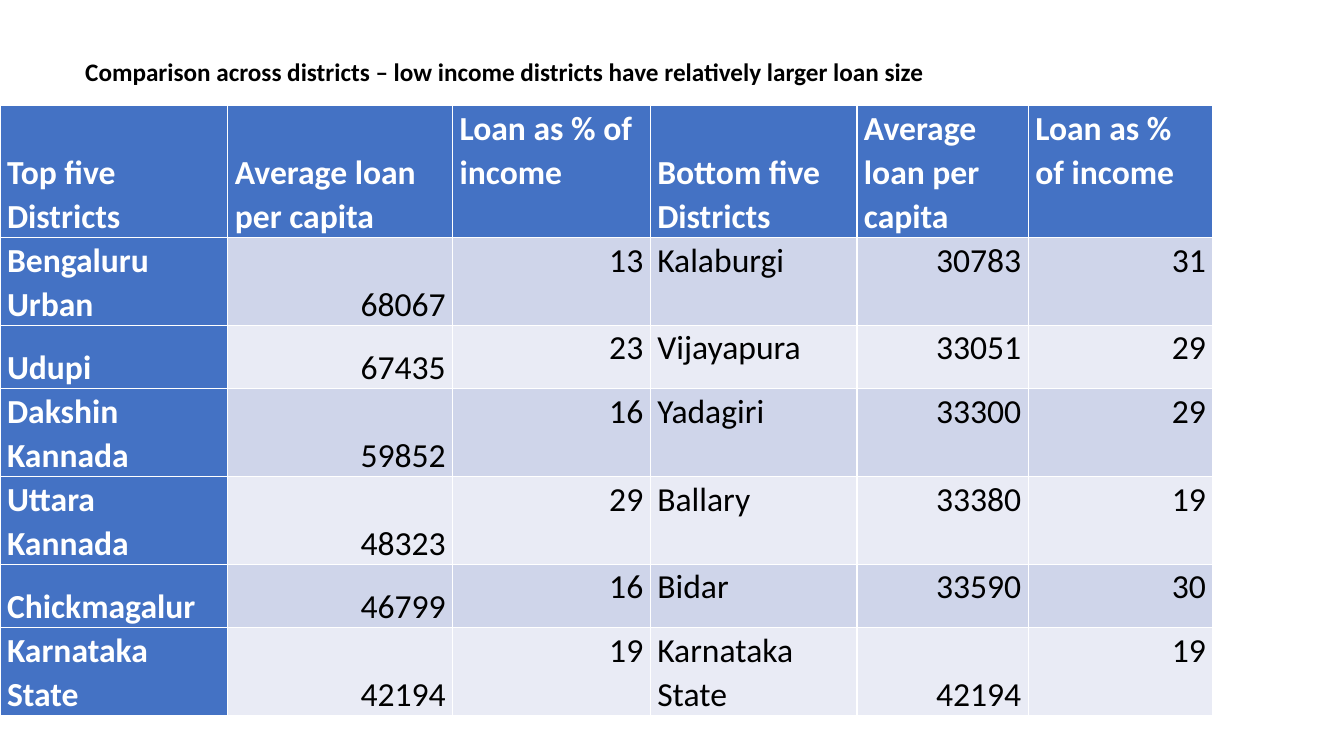
from dataclasses import dataclass

import pptx
import pptx.dml.color
import pptx.enum.text
import pptx.util

Inches = pptx.util.Inches
Pt = pptx.util.Pt
RGB = pptx.dml.color.RGBColor.from_string
ALIGN = pptx.enum.text.PP_ALIGN
ANCHOR = pptx.enum.text.MSO_ANCHOR


@dataclass(frozen=True)
class Theme:
    font: str = "Calibri"
    title_size: int = 18
    table_size: int = 24
    text: str = "000000"
    header_text: str = "FFFFFF"
    header_fill: str = "4472C4"
    bands: tuple = ("E9EBF5", "CFD5EA")


theme = Theme()


def style_text(p, size, color, bold, align):
    p.font.name = theme.font
    p.font.size = Pt(size)
    p.font.bold = bold
    p.font.color.rgb = RGB(color)
    p.alignment = align


prs = pptx.Presentation()
prs.slide_width, prs.slide_height = Inches(13.33), Inches(7.5)
s = prs.slides.add_slide(prs.slide_layouts[5])

# Title
title = s.shapes.title
title.left, title.top = Inches(0.7), Inches(0.51)
title.width, title.height = Inches(8.61), Inches(0.4)
tf = title.text_frame
tf.text = "Comparison across districts – low income districts have relatively larger loan size"
tf.auto_size = pptx.enum.text.MSO_AUTO_SIZE.NONE
tf.word_wrap = True
tf.vertical_anchor = ANCHOR.TOP
style_text(tf.paragraphs[0], theme.title_size, theme.text, True, ALIGN.CENTER)

# District table
measures = ["Average loan per capita", "Loan as % of income"]
rows = [
    ["Top five Districts", *measures, "Bottom five Districts", *measures],
    ["Bengaluru Urban", 68067, 13, "Kalaburgi", 30783, 31],
    ["Udupi", 67435, 23, "Vijayapura", 33051, 29],
    ["Dakshin Kannada", 59852, 16, "Yadagiri", 33300, 29],
    ["Uttara Kannada", 48323, 29, "Ballary", 33380, 19],
    ["Chickmagalur", 46799, 16, "Bidar", 33590, 30],
    ["Karnataka State", 42194, 19, "Karnataka State", 42194, 19],
]
col_widths = [2.26, 2.23, 1.96, 2.05, 1.7, 1.83]
row_heights = [1.12, 0.87, 0.63, 0.79, 0.79, 0.63, 0.87]
bottom_cells = {(0, 3), (0, 4), (len(rows) - 1, 4)}

table = s.shapes.add_table(len(rows), len(col_widths), Inches(0), Inches(1.05),
                           Inches(12.04), Inches(5.94)).table
table.first_col = True
for column, width in zip(table.columns, col_widths):
    column.width = Inches(width)
for row, height in zip(table.rows, row_heights):
    row.height = Inches(height)

for i, values in enumerate(rows):
    for j, value in enumerate(values):
        cell = table.cell(i, j)
        is_header = i == 0 or j == 0
        at_bottom = j < 2 or (i, j) in bottom_cells
        cell.fill.solid()
        cell.fill.fore_color.rgb = RGB(theme.header_fill if is_header else theme.bands[i % 2])
        cell.margin_left = cell.margin_right = Inches(0.07)
        cell.margin_top = cell.margin_bottom = Inches(0)
        cell.vertical_anchor = ANCHOR.BOTTOM if at_bottom else ANCHOR.TOP
        cell.text = str(value)
        p = cell.text_frame.paragraphs[0]
        p.line_spacing = 1.07
        p.space_after = Pt(8)
        style_text(p, theme.table_size, theme.header_text if is_header else theme.text,
                   is_header, ALIGN.RIGHT if isinstance(value, int) else ALIGN.LEFT)

prs.save("out.pptx")
